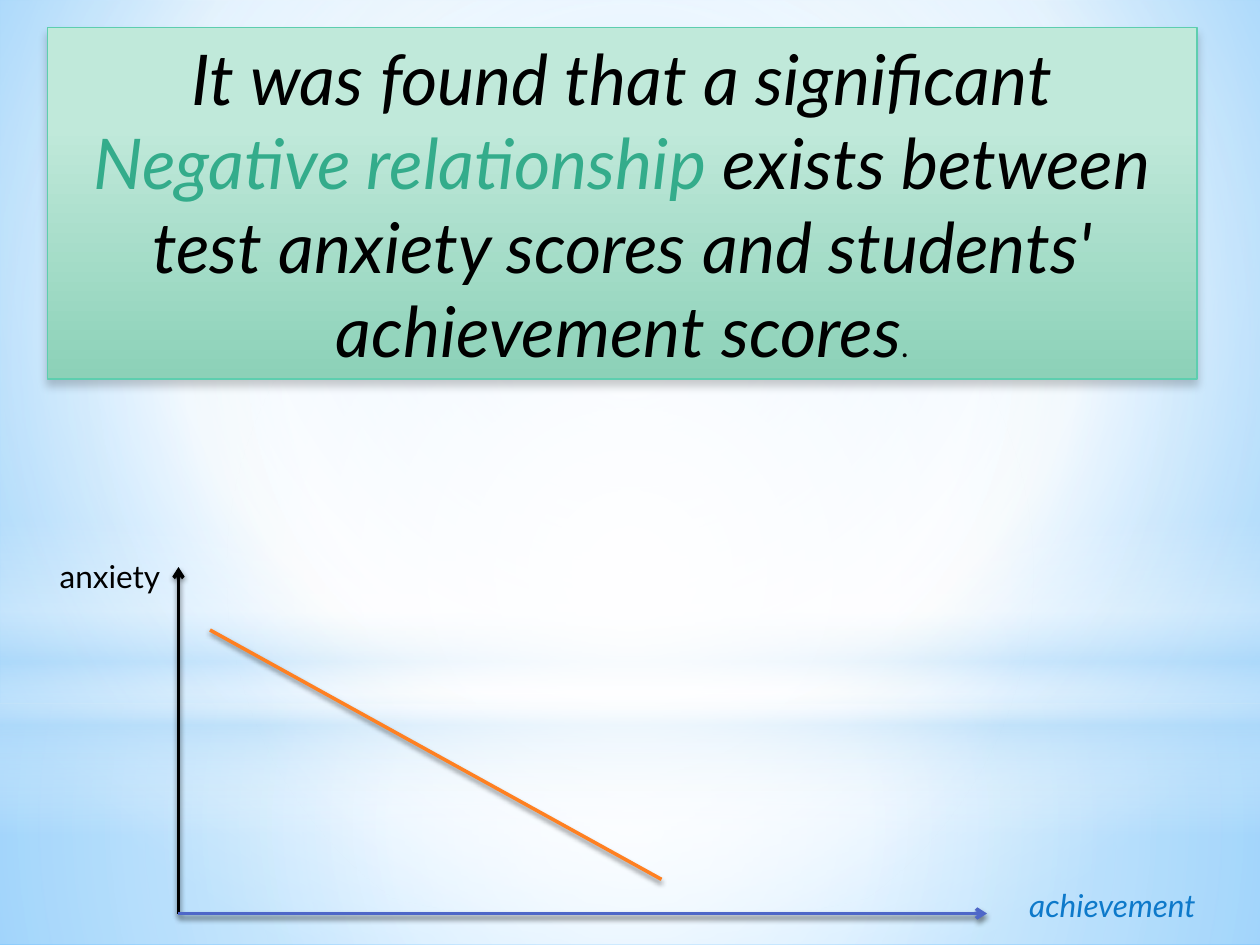
import pptx
import pptx.dml.color
import pptx.enum.shapes
import pptx.enum.text
import pptx.oxml
import pptx.oxml.ns
import pptx.util

SHAPES = pptx.enum.shapes.MSO_SHAPE
ALIGN = pptx.enum.text.PP_ALIGN
AUTO_SIZE = pptx.enum.text.MSO_AUTO_SIZE
COLUMNS, ROWS = 120, 90
CENTRE = (50, 50, 50, 50)
BLACK, WHITE, SKY = "000000", "FFFFFF", "B4DCFA"


def colour(code):
    return pptx.dml.color.RGBColor.from_string(code)


def colour_xml(code, opacity=100):
    return f'<a:srgbClr val="{code}"><a:alpha val="{opacity * 1000}"/></a:srgbClr>'


def element(tag, attributes="", content=""):
    namespace = pptx.oxml.ns.nsdecls("a")
    return pptx.oxml.parse_xml(f"<a:{tag} {namespace} {attributes}>{content}</a:{tag}>")


class SlideBuilder:
    """Draws on one slide; positions are columns and rows of a 120 by 90 grid."""

    font = "Lato"
    label_size = 18
    line_width = 2

    def __init__(self, deck):
        self.deck = deck
        self.page = deck.slides.add_slide(deck.slide_layouts[6])

    def place(self, *lengths):
        width, height = self.deck.slide_width, self.deck.slide_height
        return [round(length * (height / ROWS if index % 2 else width / COLUMNS))
                for index, length in enumerate(lengths)]

    def gradient(self, fill, owner, stops, focus=None):
        """Stops are (position, colour, opacity); without focus it runs downwards."""
        fill.gradient()
        old = owner.find(".//" + pptx.oxml.ns.qn("a:gradFill"))
        stop_xml = "".join(f'<a:gs pos="{stop[0] * 1000}">{colour_xml(*stop[1:])}</a:gs>'
                           for stop in stops)
        if focus:
            sides = " ".join(f'{side}="{share * 1000}"' for side, share in zip("ltrb", focus))
            course = f'<a:path path="circle"><a:fillToRect {sides}/></a:path>'
        else:
            course = '<a:lin ang="5400000" scaled="0"/>'
        content = f"<a:gsLst>{stop_xml}</a:gsLst>{course}"
        old.getparent().replace(old, element("gradFill", 'rotWithShape="1"', content))

    def shadow(self, shape, opacity, blur, distance):
        properties = shape.element.spPr
        for old in properties.findall(pptx.oxml.ns.qn("a:effectLst")):
            properties.remove(old)
        content = (f'<a:outerShdw blurRad="{pptx.util.Pt(blur)}" dist="{pptx.util.Pt(distance)}" '
                   f'dir="5400000" rotWithShape="0">{colour_xml(BLACK, opacity)}</a:outerShdw>')
        properties.append(element("effectLst", "", content))

    def background(self, stops, focus):
        self.gradient(self.page.background.fill, self.page.element, stops, focus)

    def panel(self, kind, area, stops, focus=None):
        shape = self.page.shapes.add_shape(kind, *self.place(*area))
        shape.shadow.inherit = False
        shape.line.fill.background()
        self.gradient(shape.fill, shape.element, stops, focus)
        return shape

    def statement(self, area, stops, border, parts, size):
        """Parts are (text, colour, size, italic) runs of one centred paragraph."""
        box = self.panel(SHAPES.RECTANGLE, area, stops)
        box.line.color.rgb = colour(border)
        box.line.width = pptx.util.Pt(0.75)
        self.shadow(box, 20, 5, 4)
        box.text_frame.word_wrap = True
        para = box.text_frame.paragraphs[0]
        para.alignment = ALIGN.CENTER
        para.font.name = self.font
        for text, code, points, italic in parts:
            span = para.add_run()
            span.text = text
            span.font.name = self.font
            span.font.size = pptx.util.Pt(points or size)
            span.font.italic = italic
            span.font.color.rgb = colour(code)

    def line(self, start, end, code, arrow=False):
        connector = self.page.shapes.add_connector(
            pptx.enum.shapes.MSO_CONNECTOR.STRAIGHT, *self.place(*start, *end))
        connector.line.color.rgb = colour(code)
        connector.line.width = pptx.util.Pt(self.line_width)
        if arrow:
            connector.line.fill  # the line properties exist once the colour is set
            outline = connector.element.spPr.find(pptx.oxml.ns.qn("a:ln"))
            outline.append(element("tailEnd", 'type="arrow"'))
        self.shadow(connector, 45, 3.1, 1.8)

    def label(self, area, text, code, italic=False, align=ALIGN.LEFT):
        box = self.page.shapes.add_textbox(*self.place(*area))
        box.text_frame.word_wrap = False
        box.text_frame.auto_size = AUTO_SIZE.SHAPE_TO_FIT_TEXT
        para = box.text_frame.paragraphs[0]
        para.text = text
        para.alignment = align
        para.font.name = self.font
        para.font.size = pptx.util.Pt(self.label_size)
        para.font.italic = italic
        para.font.color.rgb = colour(code)


def main():
    deck = pptx.Presentation()
    deck.slide_width = pptx.util.Inches(10)
    deck.slide_height = pptx.util.Inches(7.5)
    slide = SlideBuilder(deck)

    # Sky backdrop: floor, wall, horizon and central glow
    slide.background([(0, "9ED5FF"), (60, WHITE), (100, "5BB9FF")], (20, 10, 20, 60))
    slide.panel(SHAPES.RECTANGLE, (0, 67, 120, 23),
                [(0, WHITE, 91), (37, WHITE, 76), (100, SKY, 79)], CENTRE)
    slide.panel(SHAPES.RECTANGLE, (0, 0, 120, 67),
                [(0, WHITE, 89), (48, WHITE, 62), (100, SKY, 79)], CENTRE)
    slide.panel(SHAPES.RECTANGLE, (0, 49.5, 120, 30),
                [(0, WHITE, 0), (29, WHITE, 30), (45, SKY, 40),
                 (55, WHITE, 26), (65, SKY, 60), (100, WHITE, 0)])
    slide.panel(SHAPES.OVAL, (0, 21, 120, 67), [(0, WHITE), (56, WHITE, 0)], CENTRE)

    # Finding
    slide.statement((4.5, 2.6, 109.5, 33.5), [(28, "C0E9DA"), (100, "8CD1B8")], "5DCEAF", [
        ("It was found that a significant ", BLACK, None, True),
        ("Negative relationship ", "34AC8B", None, True),
        ("exists between test anxiety scores and students' achievement scores",
         BLACK, None, True),
        (".", BLACK, 18, False),
    ], size=40)

    # Sketch of the relationship: two axes and a falling line
    origin = (17, 87)
    slide.line(origin, (17, 54), BLACK, arrow=True)
    slide.line(origin, (94, 87), "4E67C8", arrow=True)
    slide.line((20, 60), (63, 83.75), "FF8021")
    slide.label((4.5, 52.5, 12.4, 4.8), "anxiety", BLACK)
    slide.label((96, 83.75, 19.9, 4.8), "achievement", "0D79CA", italic=True, align=ALIGN.CENTER)

    deck.save("out.pptx")


if __name__ == "__main__":
    main()
